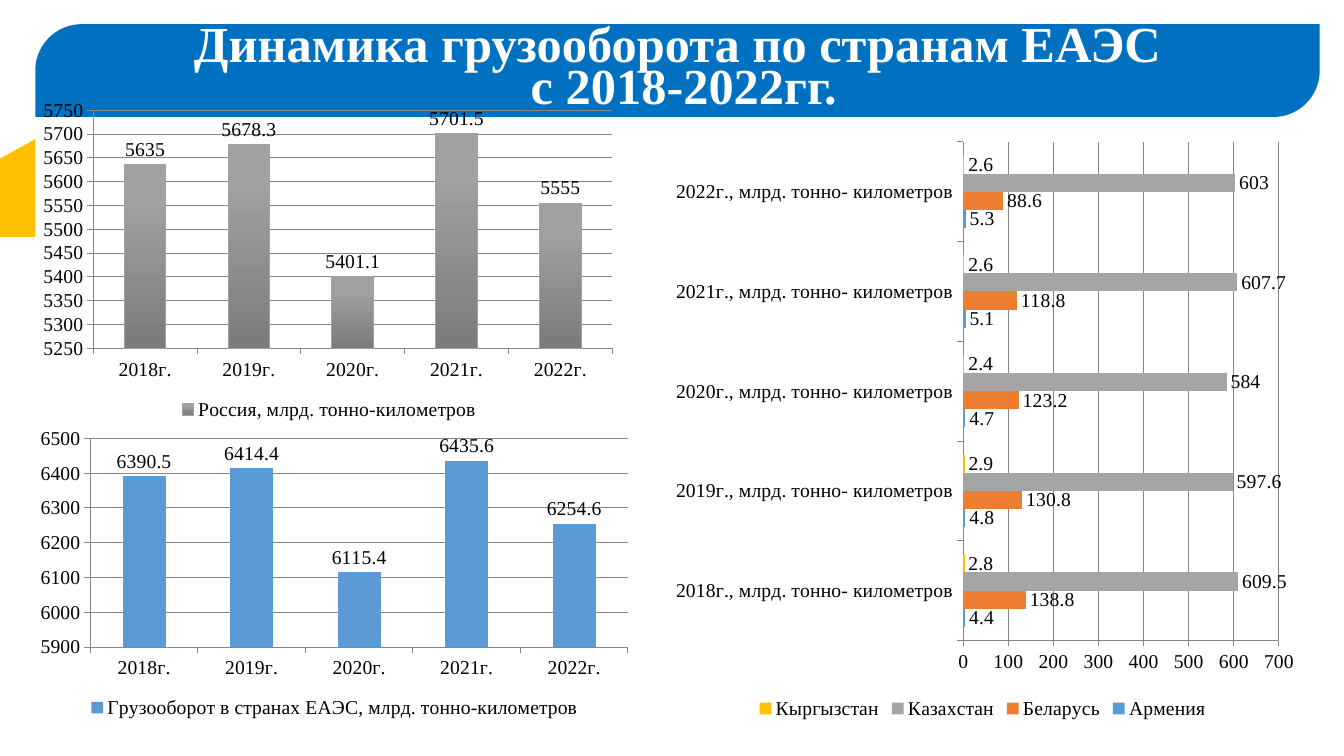
from lxml import etree
from pptx import Presentation
from pptx.chart.data import CategoryChartData
from pptx.dml.color import RGBColor
from pptx.enum.chart import XL_CHART_TYPE as ChartType, XL_LABEL_POSITION as LabelPosition
from pptx.enum.chart import XL_LEGEND_POSITION as LegendPosition, XL_TICK_MARK as TickMark
from pptx.enum.shapes import MSO_SHAPE as Shape
from pptx.enum.text import MSO_ANCHOR as Anchor, PP_ALIGN as Align
from pptx.oxml.ns import qn
from pptx.util import Inches, Pt

FONT = "Times New Roman"
BLUE, ORANGE, GREY, YELLOW = "5B9BD5", "ED7D31", "A5A5A5", "FFC000"
AXIS_GREY = "868686"

presentation = Presentation()
presentation.slide_width = Inches(13.33)
presentation.slide_height = Inches(7.5)
slide = presentation.slides.add_slide(presentation.slide_layouts[6])


def color(hex_code):
    return RGBColor.from_string(hex_code)


def area(left, top, width, height):
    """Turn percentages of the slide into lengths."""
    across, down = presentation.slide_width / 100, presentation.slide_height / 100
    return int(left * across), int(top * down), int(width * across), int(height * down)


# Title banner and side tab
banner = slide.shapes.add_shape(Shape.ROUND_2_DIAG_RECTANGLE, *area(2.63, 3.2, 95.57, 12.27))
banner.adjustments[0] = 0.5
side_tab = slide.shapes.add_shape(Shape.FLOWCHART_MANUAL_INPUT, *area(0, 18.4, 2.63, 12.93))
for shape, fill in ((banner, "0070C0"), (side_tab, YELLOW)):
    shape.shadow.inherit = False
    shape.fill.solid()
    shape.fill.fore_color.rgb = color(fill)
    shape.line.fill.background()

frame = banner.text_frame
frame.word_wrap = True
frame.vertical_anchor = Anchor.MIDDLE
for index, line in enumerate(("Динамика грузооборота по странам ЕАЭС", " с 2018-2022гг.")):
    paragraph = frame.add_paragraph() if index else frame.paragraphs[0]
    paragraph.alignment = Align.CENTER
    paragraph.line_spacing = 0.7
    run = paragraph.add_run()
    run.text = line
    run.font.name, run.font.size, run.font.bold = FONT, Pt(36), True
    run.font.color.rgb = color("FFFFFF")

# Chart contents: place, plot area shares, value scale, categories, series
years = [f"{year}г." for year in range(2018, 2023)]
charts = [
    dict(kind=ChartType.COLUMN_CLUSTERED, place=(2.18, 55.6, 45.46, 40),
         plot=(0.1, 0.06, 0.88, 0.69), scale=(5900, 6500, 100), categories=years,
         series=[("Грузооборот в странах ЕАЭС, млрд. тонно-километров", BLUE,
                  (6390.5, 6414.4, 6115.4, 6435.6, 6254.6))]),
    dict(kind=ChartType.BAR_CLUSTERED, place=(49.14, 17.2, 47.94, 78.53),
         plot=(0.47, 0.02, 0.49, 0.84), scale=(0, 700, 100),
         categories=[f"{year}, млрд. тонно- километров" for year in years],
         series=[("Армения", BLUE, (4.4, 4.8, 4.7, 5.1, 5.3)),
                 ("Беларусь", ORANGE, (138.8, 130.8, 123.2, 118.8, 88.6)),
                 ("Казахстан", GREY, (609.5, 597.6, 584, 607.7, 603)),
                 ("Кыргызстан", YELLOW, (2.8, 2.9, 2.4, 2.6, 2.6))]),
    dict(kind=ChartType.COLUMN_CLUSTERED, place=(2.55, 12.4, 43.89, 43.73),
         plot=(0.1, 0.05, 0.88, 0.72), scale=(5250, 5750, 50), categories=years,
         series=[("Россия, млрд. тонно-километров", None,
                  (5635, 5678.3, 5401.1, 5701.5, 5555))]),
]

for content in charts:
    data = CategoryChartData()
    data.categories = content["categories"]
    for name, _, values in content["series"]:
        data.add_series(name, values)
    chart = slide.shapes.add_chart(content["kind"], *area(*content["place"]), data).chart
    chart.has_title = False
    chart.font.name, chart.font.size = FONT, Pt(14)
    chart.font.color.rgb = color("000000")

    # Legend
    chart.has_legend = True
    chart.legend.position = LegendPosition.BOTTOM
    chart.legend.include_in_layout = False

    # Axes
    scale = chart.value_axis
    scale.minimum_scale, scale.maximum_scale, scale.major_unit = content["scale"]
    scale.has_major_gridlines = True
    scale.major_gridlines.format.line.color.rgb = color(AXIS_GREY)
    for axis in (scale, chart.category_axis):
        axis.major_tick_mark = TickMark.OUTSIDE
        axis.format.line.color.rgb = color(AXIS_GREY)

    # Bars and their labels
    plot = chart.plots[0]
    plot.vary_by_categories = False
    plot.gap_width, plot.overlap = 150, 0
    plot.has_data_labels = True
    plot.data_labels.show_value = True
    plot.data_labels.position = LabelPosition.OUTSIDE_END
    for series, (_, fill, _) in zip(plot.series, content["series"]):
        series.invert_if_negative = False
        bar = series.format
        if fill:
            bar.fill.solid()
            bar.fill.fore_color.rgb = color(fill)
        else:
            bar.fill.gradient()
            bar.fill.gradient_angle = 90
            for stop, position, shade in zip(bar.fill.gradient_stops, (0, 0.8), ("7B7B7B", "A0A0A0")):
                stop.position = position
                stop.color.rgb = color(shade)
            bar.line.color.rgb = color("A1A1A1")
            bar.line.width = Pt(0.75)

    # Fixed plot area
    plot_area = chart.element.find(".//" + qn("c:plotArea"))
    for old_layout in plot_area.findall(qn("c:layout")):
        plot_area.remove(old_layout)
    layout = etree.Element(qn("c:layout"))
    manual = etree.SubElement(layout, qn("c:manualLayout"))
    settings = [("layoutTarget", "inner"), ("xMode", "edge"), ("yMode", "edge")]
    for tag, value in settings + list(zip("xywh", content["plot"])):
        etree.SubElement(manual, qn(f"c:{tag}")).set("val", str(value))
    plot_area.insert(0, layout)

presentation.save("out.pptx")
